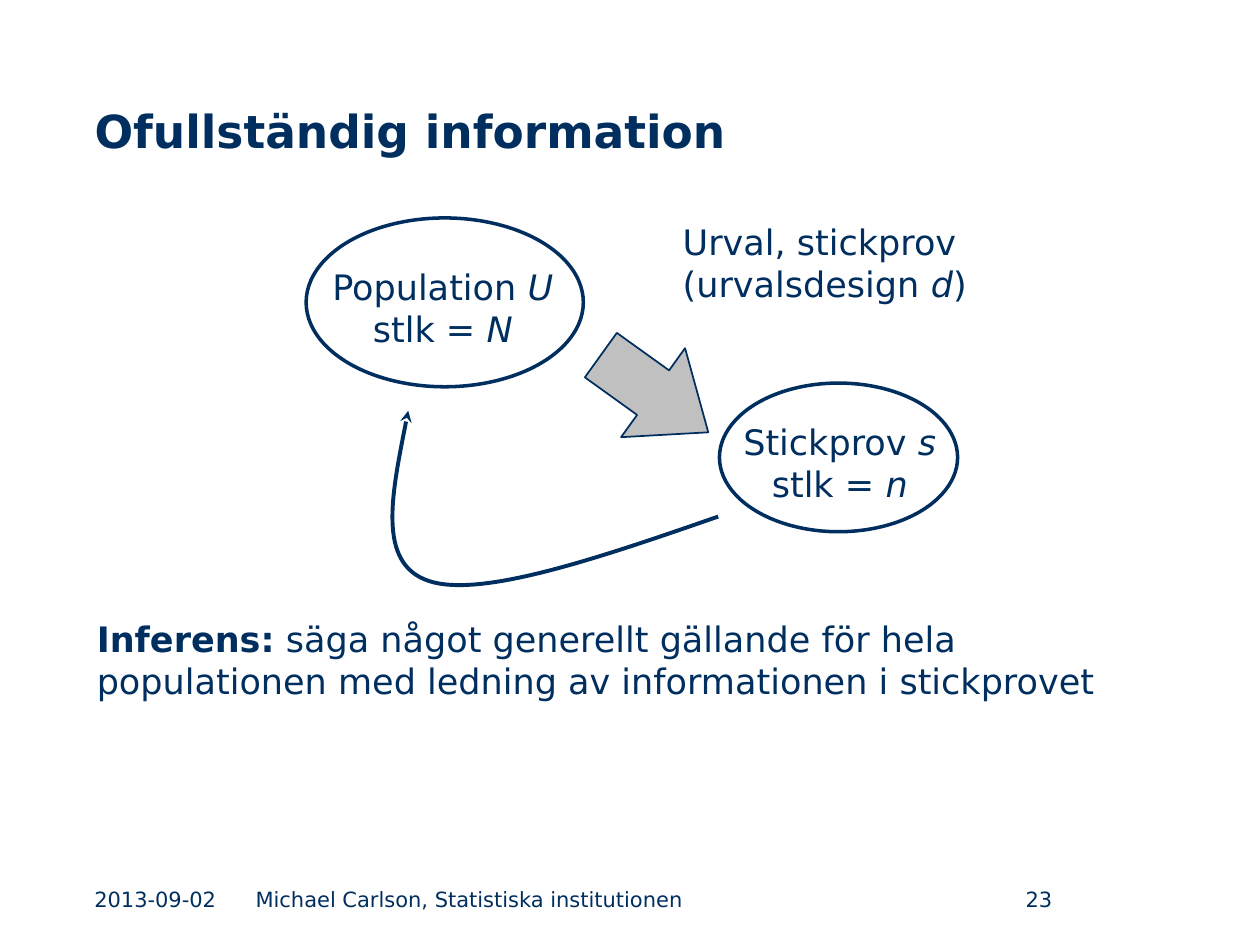
from lxml.etree import SubElement
from pptx import Presentation
from pptx.dml.color import RGBColor
from pptx.enum.shapes import MSO_SHAPE as Shape
from pptx.enum.text import MSO_ANCHOR as Anchor, MSO_AUTO_SIZE as AutoSize, PP_ALIGN as Align
from pptx.oxml.ns import qn
from pptx.util import Inches, Pt

COLORS = {"navy": "002F5F", "grey": "C0C0C0"}


class SlideBuilder:
    font = "DejaVu Sans"

    def __init__(self, slide):
        self.slide = slide

    def color(self, name):
        return RGBColor.from_string(COLORS[name])

    def box(self, at):
        return [Inches(length) for length in at]

    def style(self, font, size):
        font.name, font.size = self.font, Pt(size)
        font.color.rgb = self.color("navy")

    def title(self, words, at):
        title = self.slide.shapes.title
        title.left, title.top, title.width, title.height = self.box(at)
        frame = title.text_frame
        frame.text = words
        frame.auto_size = AutoSize.NONE
        frame.vertical_anchor = Anchor.BOTTOM
        heading = frame.paragraphs[0]
        heading.alignment = Align.LEFT
        font = heading.runs[0].font
        self.style(font, 26)
        font.bold = True

    def text(self, lines, at, size=20, align=Align.LEFT, wrap=False, anchor=Anchor.TOP):
        """Each line is a list of (words, emphasis) with emphasis "", "b" or "i"."""
        frame = self.slide.shapes.add_textbox(*self.box(at)).text_frame
        frame.word_wrap = wrap
        frame.vertical_anchor = anchor
        for index, line in enumerate(lines):
            paragraph = frame.add_paragraph() if index else frame.paragraphs[0]
            paragraph.alignment = align
            for words, emphasis in line:
                run = paragraph.add_run()
                run.text = words
                self.style(run.font, size)
                run.font.bold = emphasis == "b"
                run.font.italic = emphasis == "i"

    def outline(self, shape, width):
        shape.shadow.inherit = False
        shape.line.color.rgb = self.color("navy")
        shape.line.width = Pt(width)

    def ellipse(self, at):
        ellipse = self.slide.shapes.add_shape(Shape.OVAL, *self.box(at))
        ellipse.fill.background()
        self.outline(ellipse, 2)

    def block_arrow(self, at, rotation):
        arrow = self.slide.shapes.add_shape(Shape.RIGHT_ARROW, *self.box(at))
        arrow.adjustments[1] = 0.62
        arrow.rotation = rotation
        arrow.fill.solid()
        arrow.fill.fore_color.rgb = self.color("grey")
        self.outline(arrow, 1)

    def curved_arrow(self, start, points):
        """Bezier curve with its arrowhead at start; points come in threes."""
        scaled = [tuple(self.box(point)) for point in points]
        builder = self.slide.shapes.build_freeform(*self.box(start))
        builder.add_line_segments(scaled, close=False)
        curve = builder.convert_to_shape()
        curve.fill.background()
        self.outline(curve, 2.25)
        # Turn each three line segments into one cubic segment
        segments = curve._element.xpath(".//a:lnTo")
        for first in range(0, len(segments), 3):
            cubic = SubElement(segments[first].getparent(), qn("a:cubicBezTo"))
            for segment in segments[first:first + 3]:
                cubic.append(segment[0])
                segment.getparent().remove(segment)
        line = curve._element.xpath("./p:spPr/a:ln")[0]
        SubElement(line, qn("a:headEnd"), type="stealth")


def main():
    deck = Presentation()
    deck.slide_width, deck.slide_height = Inches(10), Inches(7.5)
    page = SlideBuilder(deck.slides.add_slide(deck.slide_layouts[5]))

    page.title("Ofullständig information", (0.65, 0.43, 8.69, 0.87))

    # Population and sample
    page.text([[("Population ", ""), ("U", "i")], [("stlk = ", ""), ("N", "i")]],
              (2.53, 2.06, 1.97, 0.77), align=Align.CENTER)
    page.text([[("Stickprov ", ""), ("s", "i")], [("stlk = ", ""), ("n", "i")]],
              (5.78, 3.29, 1.77, 0.77), align=Align.CENTER)
    page.ellipse((2.43, 1.73, 2.2, 1.34))
    page.ellipse((5.71, 3.04, 1.89, 1.18))

    # Sampling step
    page.block_arrow((4.67, 2.69, 1.05, 0.87), 35.7)
    page.text([[("Urval, stickprov", "")], [("(urvalsdesign ", ""), ("d", "i"), (")", "")]],
              (5.32, 1.7, 2.5, 0.77))

    # Inference back to the population
    page.curved_arrow((3.24, 3.26), [(3.12, 3.87), (2.99, 4.47), (3.4, 4.61),
                                     (3.81, 4.75), (4.75, 4.43), (5.7, 4.1)])
    page.text([[("Inferens:", "b"), (" säga något generellt gällande för hela populationen "
                                     "med ledning av informationen i stickprovet", "")]],
              (0.67, 4.85, 8.66, 0.77), wrap=True)

    # Footer
    for words, left, width, align in (
        ("2013-09-02", 0.65, 1.23, Align.LEFT),
        ("Michael Carlson, Statistiska institutionen", 1.93, 4.91, Align.LEFT),
        ("23", 6.89, 1.56, Align.RIGHT),
    ):
        page.text([[(words, "")]], (left, 6.98, width, 0.31), size=12, align=align,
                  wrap=True, anchor=Anchor.MIDDLE)

    deck.save("out.pptx")


if __name__ == "__main__":
    main()
